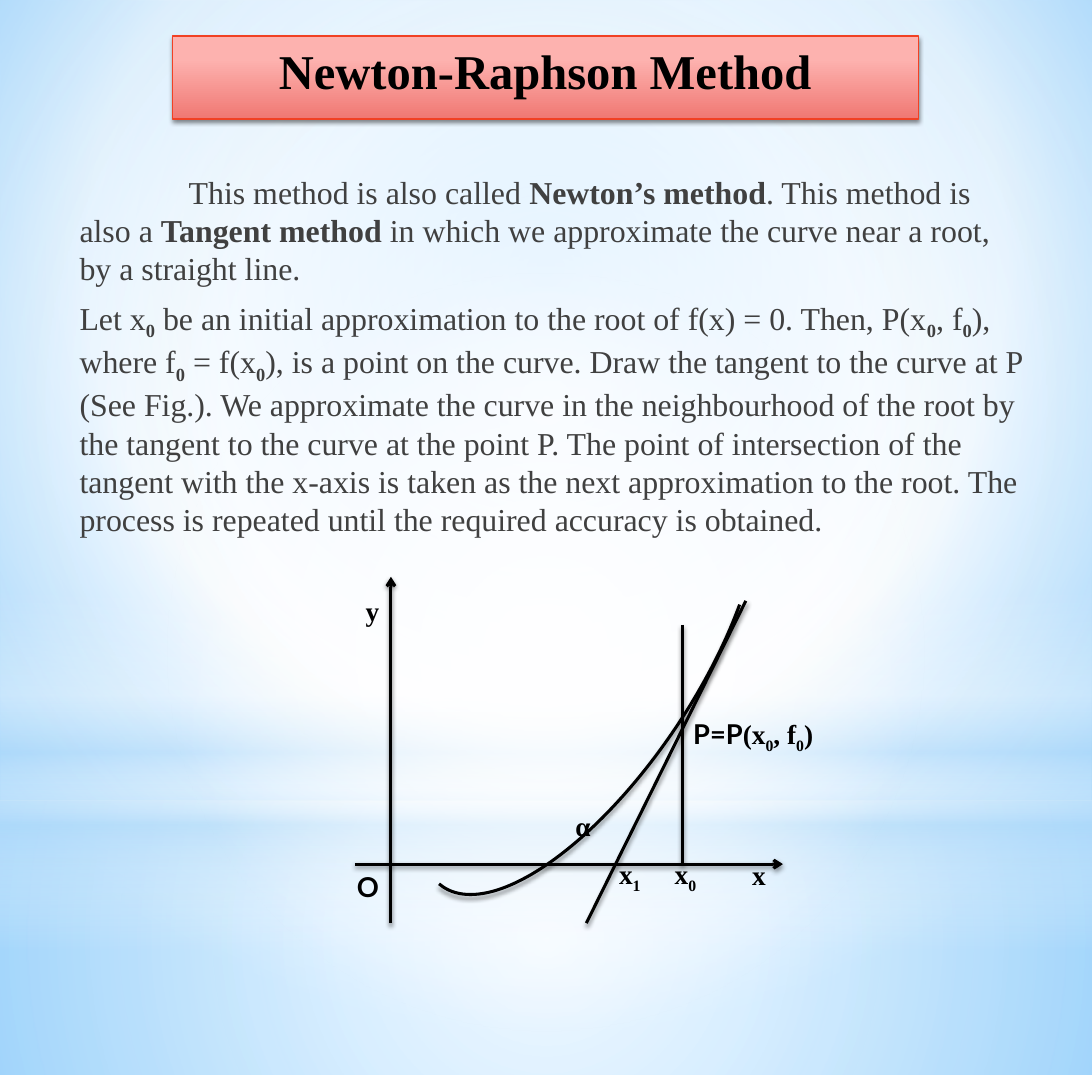
import dataclasses
import typing

import pptx
import pptx.dml.color
import pptx.enum.shapes
import pptx.enum.text
import pptx.oxml
import pptx.oxml.ns
import pptx.util

Inches = pptx.util.Inches
Pt = pptx.util.Pt
Shapes = pptx.enum.shapes.MSO_SHAPE

COLORS = {
    "ink": "000000", "body": "404040", "white": "FFFFFF", "pale": "B4DCFA",
    "sky": "9ED5FF", "blue": "5BB9FF", "pink": "FDB2AF", "coral": "F07873", "red": "F14124",
}
SERIF, SANS = "Times New Roman", "Lato"
NAMESPACE = pptx.oxml.ns.nsdecls("a")


@dataclasses.dataclass
class Gradient:
    stops: list[tuple[int, str, int]]  # position %, colour, opacity %
    focus: typing.Optional[tuple[int, int, int, int]] = (50, 50, 50, 50)  # None: top to bottom


@dataclasses.dataclass
class Panel:
    kind: Shapes
    place: tuple[float, float, float, float]
    gradient: Gradient


@dataclasses.dataclass
class Stroke:
    start: tuple[float, float]
    end: tuple[float, float]
    arrow: bool = False


@dataclasses.dataclass
class Span:
    text: str
    bold: bool = False
    subscript: bool = False
    font: str = SERIF


@dataclasses.dataclass
class Label:
    place: tuple[float, float, float]  # left, top, width
    spans: list[Span]


def gradient_xml(gradient: Gradient):
    stops = "".join(
        f'<a:gs pos="{at * 1000}"><a:srgbClr val="{COLORS[color]}">'
        f'<a:alpha val="{opacity * 1000}"/></a:srgbClr></a:gs>'
        for at, color, opacity in gradient.stops)
    if gradient.focus:
        sides = " ".join(f'{side}="{value * 1000}"' for side, value in zip("ltrb", gradient.focus))
        direction = f'<a:path path="circle"><a:fillToRect {sides}/></a:path>'
    else:
        direction = '<a:lin ang="5400000" scaled="0"/>'
    return pptx.oxml.parse_xml(
        f'<a:gradFill {NAMESPACE} rotWithShape="1"><a:gsLst>{stops}</a:gsLst>{direction}</a:gradFill>')


def apply_gradient(fill, owner, gradient: Gradient) -> None:
    fill.solid()
    solid = owner.find(pptx.oxml.ns.qn("a:solidFill"))
    owner.replace(solid, gradient_xml(gradient))


def add_shadow(shape) -> None:
    properties = shape.element.spPr
    for old in properties.findall(pptx.oxml.ns.qn("a:effectLst")):
        properties.remove(old)
    properties.append(pptx.oxml.parse_xml(
        f'<a:effectLst {NAMESPACE}><a:outerShdw blurRad="{Pt(3.1)}" dist="{Pt(1.8)}" '
        f'dir="5400000" rotWithShape="0"><a:srgbClr val="{COLORS["ink"]}">'
        '<a:alpha val="45000"/></a:srgbClr></a:outerShdw></a:effectLst>'))


def set_line(shape, color: str, width: float) -> None:
    shape.line.color.rgb = pptx.dml.color.RGBColor.from_string(COLORS[color])
    shape.line.width = Pt(width)


def add_panel(page, panel: Panel):
    shape = page.shapes.add_shape(panel.kind, *map(Inches, panel.place))
    shape.shadow.inherit = False
    apply_gradient(shape.fill, shape.element.spPr, panel.gradient)
    shape.line.fill.background()
    return shape


def add_stroke(page, stroke: Stroke) -> None:
    line = page.shapes.add_connector(
        pptx.enum.shapes.MSO_CONNECTOR.STRAIGHT, *map(Inches, stroke.start + stroke.end))
    set_line(line, "ink", 2)
    if stroke.arrow:
        line.line._get_or_add_ln().append(
            pptx.oxml.parse_xml(f'<a:tailEnd {NAMESPACE} type="arrow"/>'))
    add_shadow(line)


def write(para, spans: list[Span], size: float, color: str) -> None:
    for span in spans:
        run = para.add_run()
        run.text = span.text
        formats = {"name": span.font, "size": Pt(size), "bold": span.bold}
        for name, value in formats.items():
            setattr(run.font, name, value)
        run.font.color.rgb = pptx.dml.color.RGBColor.from_string(COLORS[color])
        if span.subscript:
            run.font._element.set("baseline", "-25000")


def add_box(page, left: float, top: float, width: float, height: float):
    box = page.shapes.add_textbox(*map(Inches, (left, top, width, height)))
    box.text_frame.word_wrap = True
    return box.text_frame


def bold(text: str, font: str = SERIF) -> Span:
    return Span(text, bold=True, font=font)


def sub(text: str) -> Span:
    return Span(text, bold=True, subscript=True)


BACKDROP = Gradient([(0, "sky", 100), (60, "white", 100), (100, "blue", 100)], (20, 10, 20, 60))
PANELS = [
    Panel(Shapes.RECTANGLE, (0, 7.33, 10, 2.52),
          Gradient([(0, "white", 91), (37, "white", 76), (100, "pale", 79)])),
    Panel(Shapes.RECTANGLE, (0, 0, 10, 7.33),
          Gradient([(0, "white", 89), (48, "white", 62), (100, "pale", 79)])),
    Panel(Shapes.RECTANGLE, (0, 5.41, 10, 3.28),
          Gradient([(0, "white", 0), (29, "white", 30), (45, "pale", 40),
                    (55, "white", 26), (65, "pale", 60), (100, "white", 0)], None)),
    Panel(Shapes.OVAL, (0, 2.3, 10, 7.33), Gradient([(0, "white", 100), (56, "white", 0)])),
]
TITLE = Panel(Shapes.RECTANGLE, (1.58, 0.33, 6.83, 0.76),
              Gradient([(28, "pink", 100), (100, "coral", 100)], None))
PARAGRAPHS = [
    (1, [Span("This method is also called "), bold("Newton’s method"),
         Span(". This method is also a "), bold("Tangent method "),
         Span("in which we approximate the curve near a root, by a straight line.")]),
    (0, [Span("Let x"), sub("0"),
         Span(" be an initial approximation to the root of f(x) = 0. Then, P(x"), sub("0"),
         Span(", f"), sub("0"), Span("), where f"), sub("0"), Span(" = f(x"), sub("0"),
         Span("), is a point on the curve. Draw the tangent to the curve at P (See Fig.). "
              "We approximate the curve in the neighbourhood of the root by the tangent to "
              "the curve at the point P. The point of intersection of the tangent with the "
              "x-axis is taken as the next approximation to the root. The process is "
              "repeated until the required accuracy is obtained.")]),
]
AXES = [Stroke((3.58, 8.45), (3.58, 5.28), True), Stroke((3.25, 7.91), (7.17, 7.91), True)]
TANGENT = Stroke((6.83, 5.5), (5.37, 8.45))
ORDINATE = Stroke((6.25, 5.72), (6.25, 7.91))
LABELS = [
    Label((6.25, 6.52, 1.33), [bold("P=P", SANS), bold("(x"), sub("0"), bold(", f"), sub("0"), bold(")")]),
    Label((5.17, 7.36, 0.42), [bold("α")]),
    Label((5.57, 7.8, 0.42), [bold("x"), sub("1")]),
    Label((6.08, 7.8, 0.42), [bold("x"), sub("0")]),
    Label((3.25, 5.39, 0.37), [bold("y")]),
    Label((6.79, 7.81, 0.29), [bold("x")]),
    Label((3.17, 7.92, 0.33), [bold("O", SANS)]),
]


def main() -> None:
    deck = pptx.Presentation()
    deck.slide_width, deck.slide_height = Inches(10), Inches(9.84)
    page = deck.slides.add_slide(deck.slide_layouts[6])

    # Backdrop
    fill = page.background.fill
    fill.solid()
    apply_gradient(fill, page.element.find(".//" + pptx.oxml.ns.qn("p:bgPr")), BACKDROP)
    for panel in PANELS:
        add_panel(page, panel)

    # Title
    title = add_panel(page, TITLE)
    set_line(title, "red", 0.75)
    add_shadow(title)
    title.text_frame.vertical_anchor = pptx.enum.text.MSO_ANCHOR.TOP
    heading = title.text_frame.paragraphs[0]
    heading.alignment = pptx.enum.text.PP_ALIGN.CENTER
    write(heading, [bold("Newton-Raphson Method")], 32, "ink")

    # Explanation
    frame = add_box(page, 0.58, 1.53, 8.92, 4.59)
    for index, (indent, spans) in enumerate(PARAGRAPHS):
        para = frame.add_paragraph() if index else frame.paragraphs[0]
        for name, value in {"space_before": Pt(4.2), "space_after": Pt(3)}.items():
            setattr(para, name, value)
        for name, value in {"marL": 0.05, "indent": indent}.items():
            para._p.get_or_add_pPr().set(name, str(Inches(value)))
        write(para, spans, 21, "body")

    # Graph: axes, curve, tangent and ordinate at P
    for axis in AXES:
        add_stroke(page, axis)
    curve = page.shapes.add_shape(Shapes.ARC, *map(Inches, (2.99, 5.16, 4.81, 1.92)))
    curve.rotation = 123.8
    curve.adjustments[0], curve.adjustments[1] = 127.91, 0.66
    curve.fill.background()
    set_line(curve, "ink", 2)
    add_shadow(curve)
    for stroke in (TANGENT, ORDINATE):
        add_stroke(page, stroke)

    # Graph labels
    for label in LABELS:
        frame = add_box(page, *label.place, 0.4)
        frame.auto_size = pptx.enum.text.MSO_AUTO_SIZE.SHAPE_TO_FIT_TEXT
        write(frame.paragraphs[0], label.spans, 18, "ink")

    deck.save("out.pptx")


if __name__ == "__main__":
    main()
